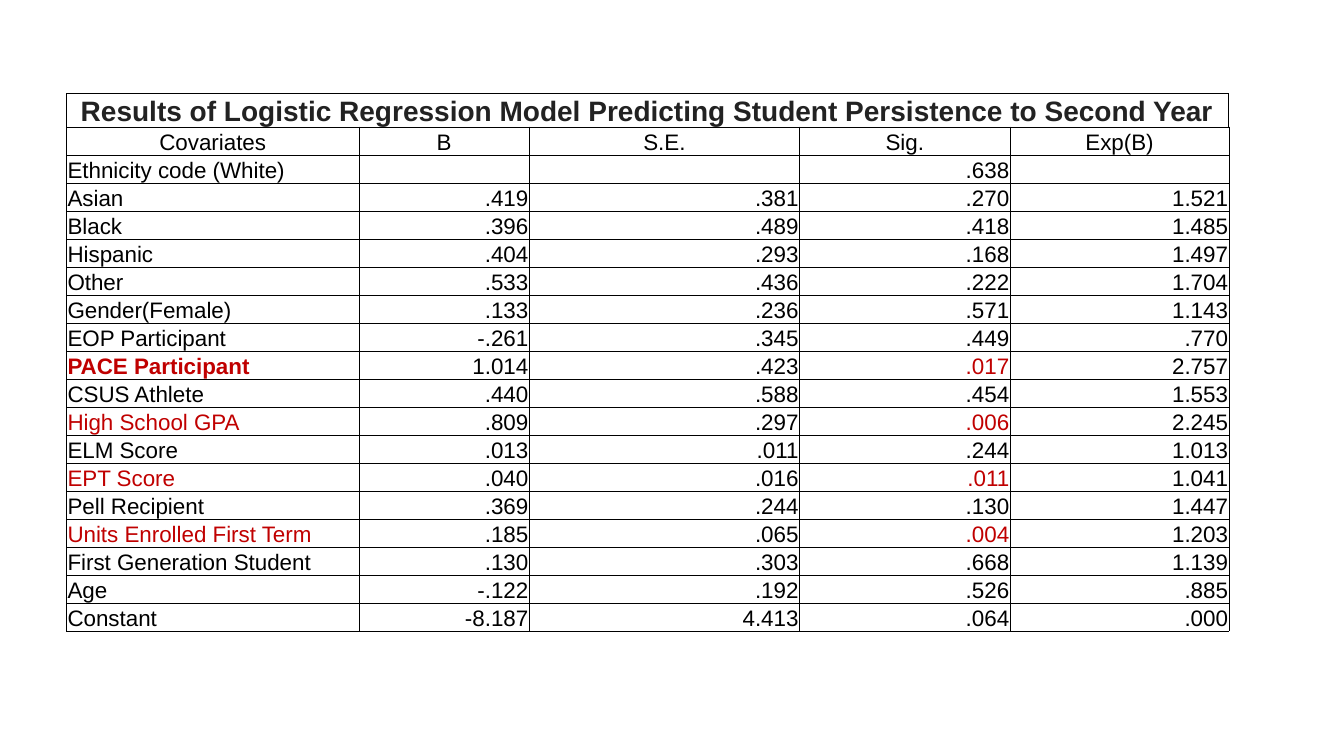
from lxml.etree import SubElement
from pptx import Presentation
from pptx.dml.color import RGBColor
from pptx.enum.text import MSO_ANCHOR as Anchor, PP_ALIGN as Align
from pptx.oxml.ns import qn
from pptx.util import Inches, Pt

COLORS = {"text": "000000", "title": "222222", "significant": "C00000", "border": "000000"}
FONT = "Arial"
TITLE = "Results of Logistic Regression Model Predicting Student Persistence to Second Year"
HEADINGS = ("Covariates", "B", "S.E.", "Sig.", "Exp(B)")
COLUMN_WIDTHS = (2.9, 1.69, 2.68, 2.09, 2.17)
SIG_COLUMN = HEADINGS.index("Sig.")
SIG_LIMIT = 0.05
BOLD_COVARIATE = "PACE Participant"
RESULTS = (
    ("Ethnicity code (White)", "", "", ".638", ""),
    ("Asian", ".419", ".381", ".270", "1.521"),
    ("Black", ".396", ".489", ".418", "1.485"),
    ("Hispanic", ".404", ".293", ".168", "1.497"),
    ("Other", ".533", ".436", ".222", "1.704"),
    ("Gender(Female)", ".133", ".236", ".571", "1.143"),
    ("EOP Participant", "-.261", ".345", ".449", ".770"),
    ("PACE Participant", "1.014", ".423", ".017", "2.757"),
    ("CSUS Athlete", ".440", ".588", ".454", "1.553"),
    ("High School GPA", ".809", ".297", ".006", "2.245"),
    ("ELM Score", ".013", ".011", ".244", "1.013"),
    ("EPT Score", ".040", ".016", ".011", "1.041"),
    ("Pell Recipient", ".369", ".244", ".130", "1.447"),
    ("Units Enrolled First Term", ".185", ".065", ".004", "1.203"),
    ("First Generation Student", ".130", ".303", ".668", "1.139"),
    ("Age", "-.122", ".192", ".526", ".885"),
    ("Constant", "-8.187", "4.413", ".064", ".000"),
)


def add_borders(cell):
    properties = cell._tc.get_or_add_tcPr()
    for side in ("lnL", "lnR", "lnT", "lnB"):
        line = SubElement(properties, qn(f"a:{side}"), w=str(Pt(0.5)))
        fill = SubElement(line, qn("a:solidFill"))
        SubElement(fill, qn("a:srgbClr"), val=COLORS["border"])


def fill_cell(cell, text, align, size=16, color="text", bold=False):
    add_borders(cell)
    cell.fill.background()
    layout = {
        "margin_left": Inches(0.01),
        "margin_right": Inches(0.01),
        "margin_top": Inches(0.01),
        "margin_bottom": 0,
        "vertical_anchor": Anchor.BOTTOM,
    }
    for name, value in layout.items():
        setattr(cell, name, value)
    para = cell.text_frame.paragraphs[0]
    para.alignment = align
    if not text:
        SubElement(para._p, qn("a:endParaRPr"), sz=str(size * 100))
        return
    span = para.add_run()
    span.text = text
    for name, value in {"name": FONT, "size": Pt(size), "bold": bold}.items():
        setattr(span.font, name, value)
    span.font.color.rgb = RGBColor.from_string(COLORS[color])


def add_plain_table(page, box, row_count, widths):
    left, top, width, height = (Inches(value) for value in box)
    table = page.shapes.add_table(row_count, len(widths), left, top, width, height).table
    table.first_row = table.horz_banding = False
    for column, column_width in zip(table.columns, widths):
        column.width = Inches(column_width)
    return table


def add_title(page, box):
    table = add_plain_table(page, box, 1, (box[2],))
    fill_cell(table.cell(0, 0), TITLE, Align.CENTER, size=20, color="title", bold=True)


def add_results(page, box):
    table = add_plain_table(page, box, len(RESULTS) + 1, COLUMN_WIDTHS)
    for column, heading in enumerate(HEADINGS):
        fill_cell(table.cell(0, column), heading, Align.CENTER)
    for row, values in enumerate(RESULTS, start=1):
        significant = float(values[SIG_COLUMN]) < SIG_LIMIT
        for column, text in enumerate(values):
            marked = significant and column in (0, SIG_COLUMN)
            fill_cell(
                table.cell(row, column),
                text,
                Align.RIGHT if column else Align.LEFT,
                color="significant" if marked else "text",
                bold=text == BOLD_COVARIATE,
            )


def main():
    deck = Presentation()
    deck.slide_width, deck.slide_height = Inches(13.33), Inches(7.5)
    page = deck.slides.add_slide(deck.slide_layouts[6])
    add_results(page, (0.66, 1.26, 11.52, 5))
    add_title(page, (0.66, 0.93, 11.52, 0.33))
    deck.save("out.pptx")


if __name__ == "__main__":
    main()
